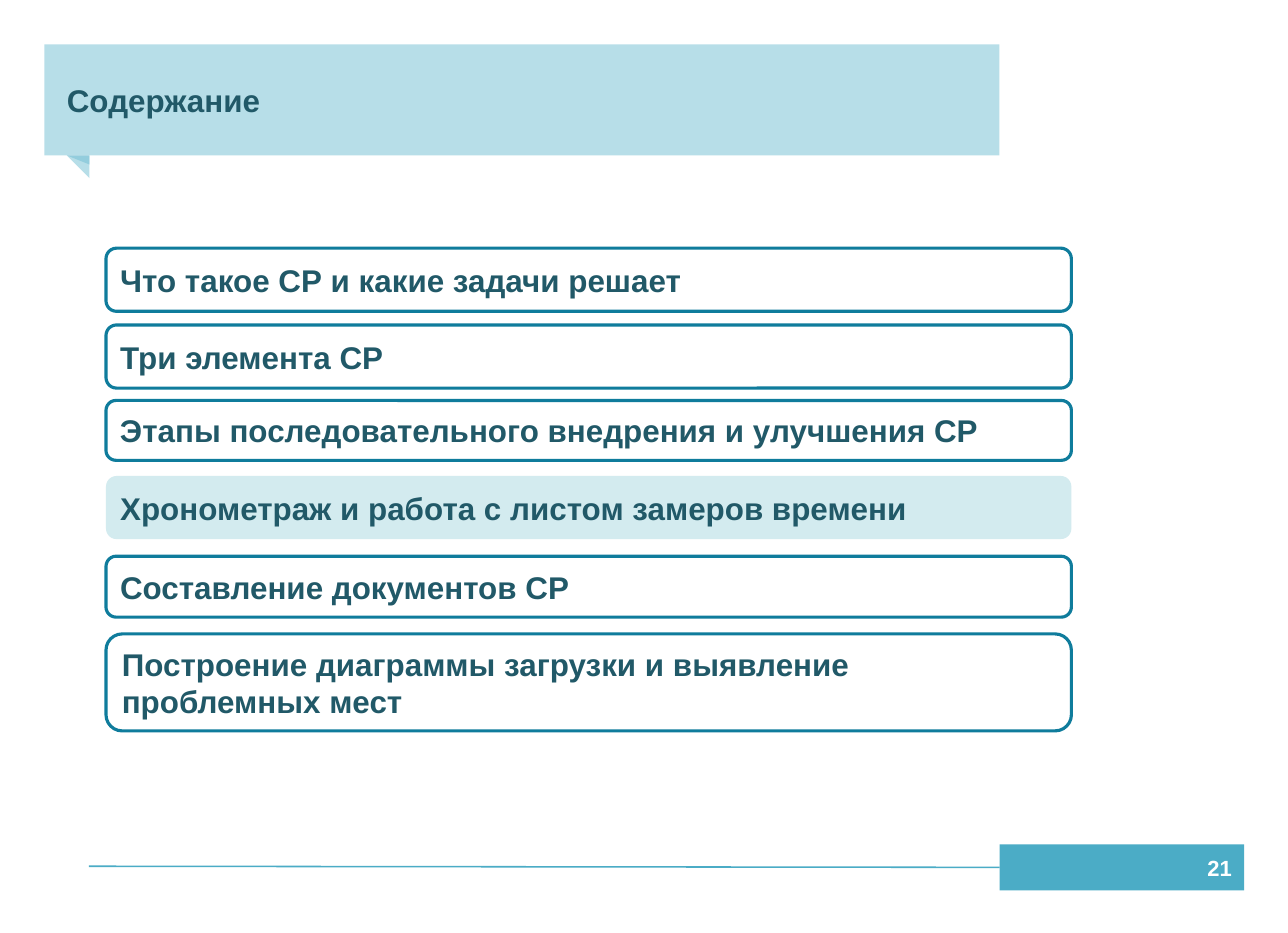
from pptx import Presentation
from pptx.dml.color import RGBColor
from pptx.enum.shapes import MSO_CONNECTOR, MSO_SHAPE
from pptx.enum.text import MSO_ANCHOR, PP_ALIGN
from pptx.oxml.ns import qn
from pptx.util import Pt
from lxml.etree import SubElement

COLORS = {
    "band": "B7DEE8",
    "fold": "93CDDD",
    "foot": "4BACC6",
    "edge": "0F7C9C",
    "mark": "D3EBEF",
    "text": "215968",
    "white": "FFFFFF",
}

TOPICS = [
    ("Что такое СР и какие задачи решает", 158.4, 40.3),
    ("Три элемента СР", 207.4, 40.3),
    ("Этапы последовательного внедрения и улучшения СР", 255.6, 38.2),
    ("Хронометраж и работа с листом замеров времени", 303.8, 40.3),
    ("Составление документов СР", 355, 38.9),
    ("Построение диаграммы загрузки и выявление проблемных мест", 404.6, 61.9),
]
ACTIVE = 3


def color(name):
    return RGBColor.from_string(COLORS[name])


def add_box(slide, kind, box, fill, edge=None):
    shape = slide.shapes.add_shape(kind, *map(Pt, box))
    shape.shadow.inherit = False
    shape.fill.solid()
    shape.fill.fore_color.rgb = color(fill)
    if edge:
        shape.line.color.rgb = color(edge)
        shape.line.width = Pt(2)
    else:
        shape.line.fill.background()
    return shape


def set_text(shape, text, size, ink, insets, align=PP_ALIGN.LEFT):
    frame = shape.text_frame
    frame.text = text
    frame.word_wrap = True
    frame.vertical_anchor = MSO_ANCHOR.MIDDLE
    frame.margin_left, frame.margin_top, frame.margin_right, frame.margin_bottom = map(Pt, insets)
    line = frame.paragraphs[0]
    line.alignment = align
    font = line.runs[0].font
    font.name = "Arial"
    font.size = Pt(size)
    font.bold = True
    font.color.rgb = color(ink)


def add_header(slide, box, title):
    left, top, width, height = box
    fold = 14.4
    for drop, fill in ((fold, "band"), (5.8, "fold")):
        corner = (left + fold, top + height, fold, drop)
        add_box(slide, MSO_SHAPE.RIGHT_TRIANGLE, corner, fill).rotation = 180
    band = add_box(slide, MSO_SHAPE.RECTANGLE, box, "band")
    set_text(band, title, 20, "text", (14.4, 0, 7.2, 0))


def add_topics(slide, left, width):
    for index, (text, top, height) in enumerate(TOPICS):
        fill, edge = ("mark", None) if index == ACTIVE else ("white", "edge")
        box = (left, top, width, height)
        topic = add_box(slide, MSO_SHAPE.ROUNDED_RECTANGLE, box, fill, edge)
        set_text(topic, text, 20, "text", (7.2, 3.6, 7.2, 3.6))


def add_footer(slide, box, start, number):
    left, top, width, height = box
    level = top + height / 2
    ends = (left, level, start, level - 0.7)
    rule = slide.shapes.add_connector(MSO_CONNECTOR.STRAIGHT, *map(Pt, ends))
    rule.line.color.rgb = color("foot")
    rule.line.width = Pt(1)
    SubElement(rule._element.spPr, qn("a:effectLst"))
    tab = add_box(slide, MSO_SHAPE.RECTANGLE, box, "foot")
    set_text(tab, number, 14, "white", (7.9, 4.3, 7.9, 4.3), PP_ALIGN.RIGHT)


def main():
    deck = Presentation()
    deck.slide_width = Pt(822.24)
    deck.slide_height = Pt(595.44)
    slide = deck.slides.add_slide(deck.slide_layouts[6])
    add_header(slide, (28.3, 28.3, 609.8, 70.9), "Содержание")
    add_topics(slide, 67.7, 616.3)
    add_footer(slide, (638.1, 538.8, 156.2, 29.5), 56.7, "21")
    deck.save("out.pptx")


if __name__ == "__main__":
    main()
